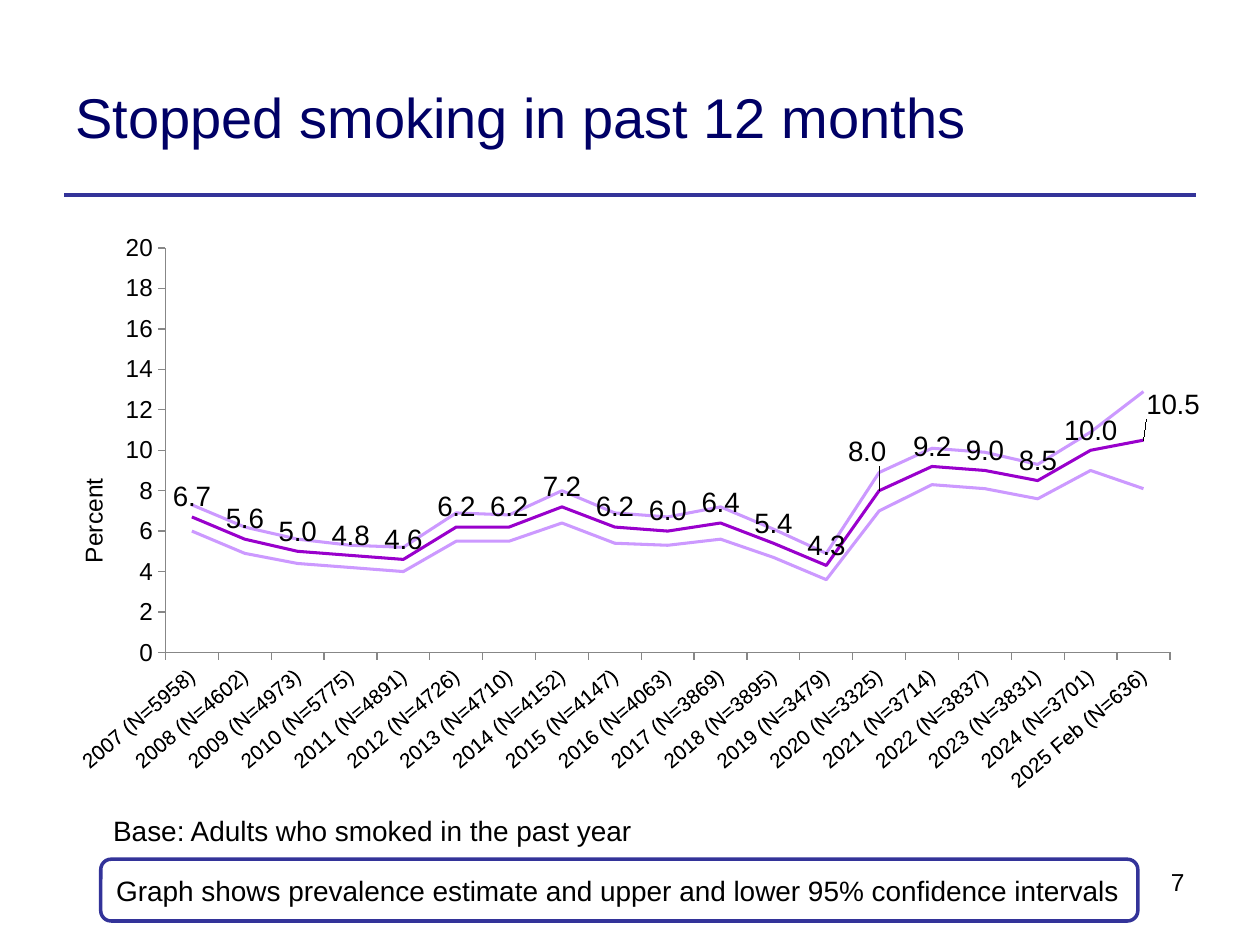
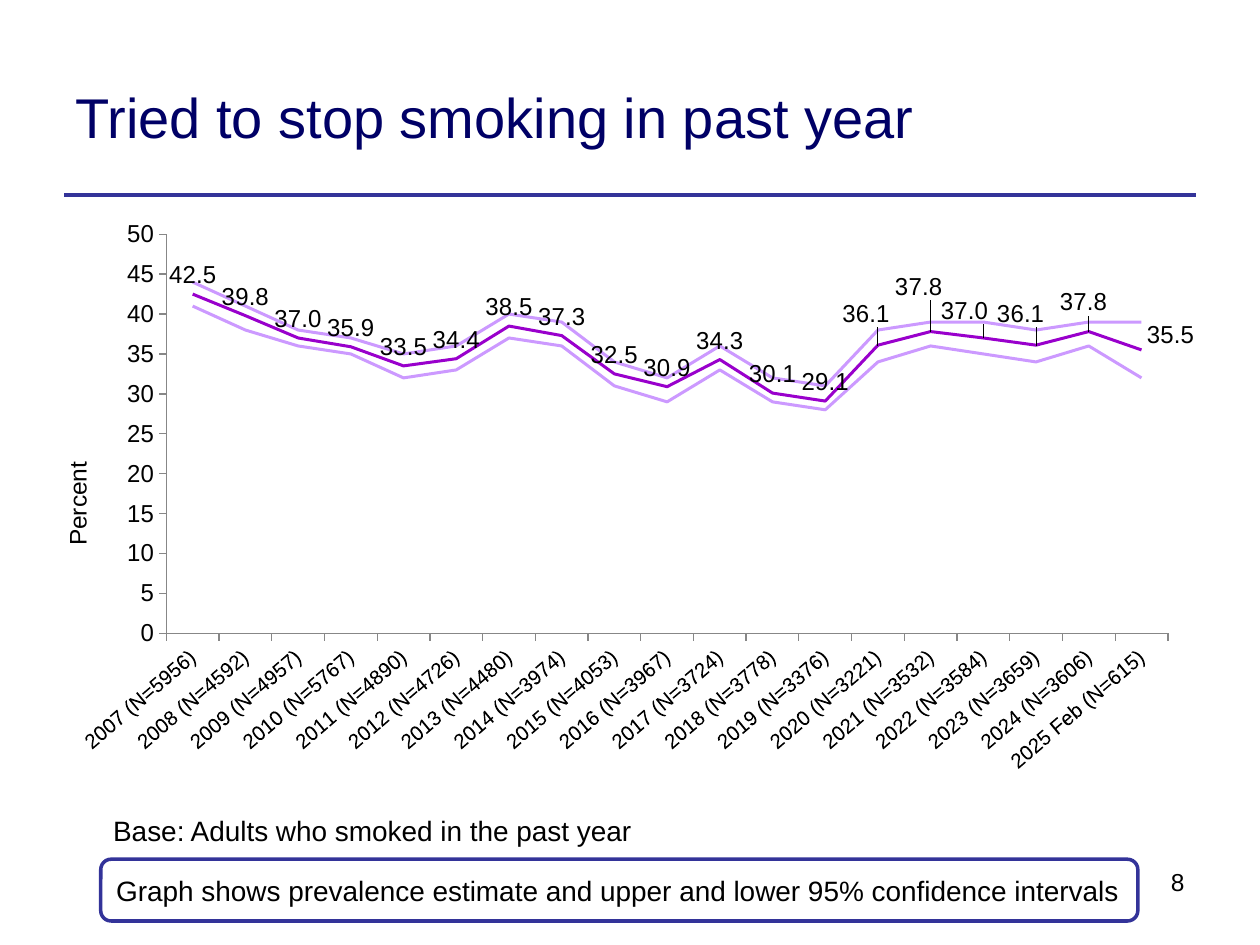
import pptx
import pptx.chart.data
import pptx.dml.color
import pptx.enum.chart
import pptx.enum.shapes
import pptx.enum.text
import pptx.oxml
import pptx.oxml.ns
import pptx.util
from lxml import etree

Pt = pptx.util.Pt
qn = pptx.oxml.ns.qn

FONT = "Arial"
COLORS = {
    "title": "000066",
    "rule": "333399",
    "text": "000000",
    "paper": "FFFFFF",
    "estimate": "9900CC",
    "interval": "CC99FF",
    "axis": "878787",
}
NUMBER_FORMAT = "#,##0.0"
YEARS = [str(year) for year in range(2007, 2025)] + ["2025 Feb"]
BASE = "Base: Adults who smoked in the past year"
NOTE = "Graph shows prevalence estimate and upper and lower 95% confidence intervals"

# frame: left, top, width, height in points; plot and axis_title: shares of the frame
# nudges: point index -> label shift (right, down) in points
STOPPED = {
    "title": "Stopped smoking in past 12 months",
    "number": 7,
    "frame": (36, 126, 649.5, 335.5),
    "plot": (0.091, 0.047, 0.892, 0.689),
    "axis_title": (0.009, 0.43),
    "scale": (20, 2),
    "label_size": 16,
    "nudges": {13: (-7, -11), 18: (17, -9)},
    "sample": [5958, 4602, 4973, 5775, 4891, 4726, 4710, 4152, 4147, 4063,
               3869, 3895, 3479, 3325, 3714, 3837, 3831, 3701, 636],
    "series": [
        [6.7, 5.6, 5, 4.8, 4.6, 6.2, 6.2, 7.2, 6.2, 6,
         6.4, 5.4, 4.3, 8, 9.2, 9, 8.5, 10, 10.5],
        [6, 4.9, 4.4, 4.2, 4, 5.5, 5.5, 6.4, 5.4, 5.3,
         5.6, 4.7, 3.6, 7, 8.3, 8.1, 7.6, 9, 8.1],
        [7.3, 6.2, 5.6, 5.3, 5.2, 6.9, 6.8, 8, 6.9, 6.7,
         7.2, 6.1, 4.9, 8.9, 10.1, 9.9, 9.3, 10.9, 12.9],
    ],
}
TRIED = {
    "title": "Tried to stop smoking in past year",
    "number": 8,
    "frame": (26.5, 126, 656, 335.5),
    "plot": (0.107, 0.023, 0.893, 0.68),
    "axis_title": (0.01, 0.4),
    "scale": (50, 5),
    "label_size": 14,
    "nudges": {13: (-7, -7), 14: (-7, -15), 15: (-11, -5),
               16: (-9, -7), 17: (-3, -6), 18: (17, 2)},
    "sample": [5956, 4592, 4957, 5767, 4890, 4726, 4480, 3974, 4053, 3967,
               3724, 3778, 3376, 3221, 3532, 3584, 3659, 3606, 615],
    "series": [
        [42.5, 39.8, 37, 35.9, 33.5, 34.4, 38.5, 37.3, 32.5, 30.9,
         34.3, 30.1, 29.1, 36.1, 37.8, 37, 36.1, 37.8, 35.5],
        [44, 41, 38, 37, 35, 36, 40, 39, 34, 32,
         36, 32, 31, 38, 39, 39, 38, 39, 39],
        [41, 38, 36, 35, 32, 33, 37, 36, 31, 29,
         33, 29, 28, 34, 36, 35, 34, 36, 32],
    ],
}


def rgb(name):
    return pptx.dml.color.RGBColor.from_string(COLORS[name])


def style_font(font, size, color="text"):
    font.name = FONT
    font.size = Pt(size)
    font.bold = False
    font.color.rgb = rgb(color)


def style_line(line, color, width):
    line.color.rgb = rgb(color)
    line.width = Pt(width)


def write(shape, text, size, color="text", align="LEFT", anchor="TOP", wrap=True):
    frame = shape.text_frame
    frame.word_wrap = wrap
    frame.vertical_anchor = getattr(pptx.enum.text.MSO_ANCHOR, anchor)
    paragraph = frame.paragraphs[0]
    paragraph.text = text
    paragraph.alignment = getattr(pptx.enum.text.PP_ALIGN, align)
    style_font(paragraph.font, size, color)


def add_text(slide, box, text, size, **style):
    write(slide.shapes.add_textbox(*map(Pt, box)), text, size, **style)


def add_rule(slide):
    rule = slide.shapes.add_connector(
        pptx.enum.shapes.MSO_CONNECTOR.STRAIGHT, Pt(36.7), Pt(111.6), Pt(683.3), Pt(111.6))
    style_line(rule.line, "rule", 2.25)
    etree.SubElement(rule._element.spPr, qn("a:effectLst"))


def add_note(slide):
    note = slide.shapes.add_shape(
        pptx.enum.shapes.MSO_SHAPE.ROUNDED_RECTANGLE, Pt(57.6), Pt(491), Pt(592.6), Pt(35.3))
    note.shadow.inherit = False
    note.fill.solid()
    note.fill.fore_color.rgb = rgb("paper")
    style_line(note.line, "rule", 2)
    write(note, NOTE, 16, anchor="MIDDLE")


def place(parent, index, **settings):
    """Give a chart part a manual layout as child number index."""
    for old in parent.findall(qn("c:layout")):
        parent.remove(old)
    layout = etree.Element(qn("c:layout"))
    manual = etree.SubElement(layout, qn("c:manualLayout"))
    for tag, value in settings.items():
        etree.SubElement(manual, qn("c:" + tag)).set("val", str(value))
    parent.insert(index, layout)


def style_axis(axis, size):
    axis.has_major_gridlines = False
    axis.major_tick_mark = pptx.enum.chart.XL_TICK_MARK.OUTSIDE
    axis.minor_tick_mark = pptx.enum.chart.XL_TICK_MARK.NONE
    style_line(axis.format.line, "axis", 0.75)
    style_font(axis.tick_labels.font, size)


def set_axes(chart, topic):
    style_axis(chart.category_axis, 12)
    label_body = chart.category_axis._element.find(qn("c:txPr")).find(qn("a:bodyPr"))
    label_body.set("rot", str(-40 * 60000))

    percent = chart.value_axis
    style_axis(percent, 14)
    percent.minimum_scale = 0
    percent.maximum_scale, percent.major_unit = topic["scale"]
    percent.tick_labels.number_format = "0"
    percent.tick_labels.number_format_is_linked = False
    frame = percent.axis_title.text_frame
    frame.text = "Percent"
    style_font(frame.paragraphs[0].font, 14)
    frame._txBody.find(qn("a:bodyPr")).set("rot", str(-90 * 60000))
    x, y = topic["axis_title"]
    place(percent.axis_title._element, 1, xMode="edge", yMode="edge", x=x, y=y)


def label_estimates(estimate, topic):
    above = pptx.enum.chart.XL_LABEL_POSITION.ABOVE
    labels = estimate.data_labels
    labels.show_value = True
    labels.position = above
    labels.number_format = NUMBER_FORMAT
    labels.number_format_is_linked = False
    style_font(labels.font, topic["label_size"])

    # Labels moved clear of the lines
    width, height = topic["frame"][2:]
    for index, (right, down) in topic["nudges"].items():
        label = estimate.points[index].data_label
        style_font(label.font, topic["label_size"])
        label.position = above
        element = label._dLbl
        place(element, 1, x=round(right / width, 4), y=round(down / height, 4))
        number = etree.Element(qn("c:numFmt"), formatCode=NUMBER_FORMAT, sourceLinked="0")
        element.insert(2, number)


def add_trend_chart(slide, topic):
    trend = pptx.chart.data.CategoryChartData()
    trend.categories = [f"{year} (N={n})" for year, n in zip(YEARS, topic["sample"])]
    for position, values in enumerate(topic["series"], 1):
        trend.add_series(f"Series {position}", values)
    chart = slide.shapes.add_chart(
        pptx.enum.chart.XL_CHART_TYPE.LINE, *map(Pt, topic["frame"]), trend).chart
    chart.has_title = False
    chart.has_legend = False
    style_font(chart.font, 18)

    plot = chart.plots[0]
    plot.vary_by_categories = False
    for series, color in zip(plot.series, ("estimate", "interval", "interval")):
        series.smooth = False
        style_line(series.format.line, color, 1.75)
    label_estimates(plot.series[0], topic)
    set_axes(chart, topic)

    x, y, w, h = topic["plot"]
    place(chart._chartSpace.chart.plotArea, 0, layoutTarget="inner",
          xMode="edge", yMode="edge", x=x, y=y, w=w, h=h)


def add_topic_slide(deck, topic):
    slide = deck.slides.add_slide(deck.slide_layouts[6])
    # Heading
    add_rule(slide)
    add_text(slide, (36, 21.6, 568, 90), topic["title"], 32, color="title", anchor="MIDDLE")
    # Estimates with confidence limits
    add_trend_chart(slide, topic)
    # Footer
    add_text(slide, (484.6, 491.8, 199.4, 37.4), str(topic["number"]), 14, align="RIGHT")
    add_note(slide)
    add_text(slide, (57.6, 461.5, 314.6, 26.6), BASE, 16, wrap=False)


def main():
    deck = pptx.Presentation()
    deck.slide_width, deck.slide_height = Pt(720), Pt(540)
    for topic in (STOPPED, TRIED):
        add_topic_slide(deck, topic)
    deck.save("out.pptx")


if __name__ == "__main__":
    main()
